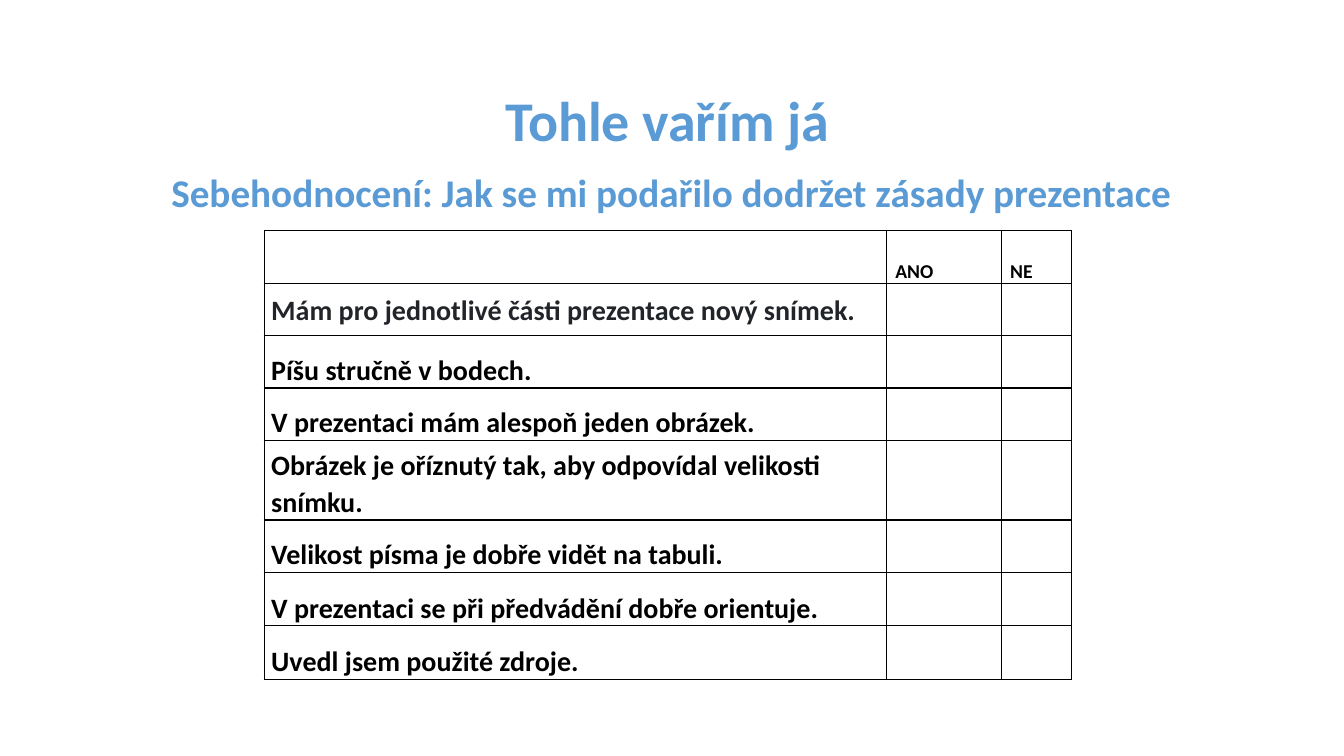
from lxml import etree
from pptx import Presentation
from pptx import util as u
from pptx.dml.color import RGBColor
from pptx.enum import text
from pptx.oxml import ns

COLORS = {"heading": "5B9BD5", "ink": "000000", "dark": "212529"}
FONT = "Calibri"
HEADINGS = [  # wording, box in inches, size, anchor, space before
    ("Tohle vařím já", (0.87, 0.72, 11.5, 0.85), 40, "BOTTOM", 0),
    ("Sebehodnocení: Jak se mi podařilo dodržet zásady prezentace",
     (0.98, 1.67, 11.35, 0.6), 28, "TOP", 10),
]
ANSWERS = ["ANO", "NE"]
CRITERIA = [
    "Mám pro jednotlivé části prezentace nový snímek.",
    "Píšu stručně v bodech.",
    "V prezentaci mám alespoň jeden obrázek.",
    "Obrázek je oříznutý tak, aby odpovídal velikosti snímku.",
    "Velikost písma je dobře vidět na tabuli.",
    "V prezentaci se při předvádění dobře orientuje.",
    "Uvedl jsem použité zdroje.",
]
TABLE_LEFT, TABLE_TOP = 2.62, 2.29
COLUMNS = [6.17, 1.14, 0.7]
ROWS = [0.52] * 4 + [0.79] + [0.52] + [0.53] * 2


def write(frame, words, size, color, **formats):
    paragraph = frame.paragraphs[0]
    for name, value in formats.items():
        setattr(paragraph, name, value)
    run = paragraph.add_run()
    run.text = words
    for name, value in {"name": FONT, "size": u.Pt(size), "bold": True}.items():
        setattr(run.font, name, value)
    run.font.color.rgb = RGBColor.from_string(COLORS[color])
    return paragraph


def add_heading(slide, words, box, size, anchor, space):
    frame = slide.shapes.add_textbox(*map(u.Inches, box)).text_frame
    frame.word_wrap = True
    frame.vertical_anchor = text.MSO_ANCHOR[anchor]
    write(frame, words, size, "heading", alignment=text.PP_ALIGN.CENTER,
          line_spacing=0.9, space_before=u.Pt(space))


def add_borders(cell):
    properties = cell._tc.get_or_add_tcPr()
    for index, side in enumerate(("lnL", "lnR", "lnT", "lnB")):
        line = etree.Element(ns.qn(f"a:{side}"), w=str(u.Pt(1)))
        fill = etree.SubElement(line, ns.qn("a:solidFill"))
        etree.SubElement(fill, ns.qn("a:srgbClr"), val=COLORS["ink"])
        properties.insert(index, line)


def fill_cell(cell, row, column, words):
    for name, value in {"margin_left": 0.07, "margin_right": 0.07,
                        "margin_top": 0, "margin_bottom": 0}.items():
        setattr(cell, name, u.Inches(value))
    anchor = "MIDDLE" if row == 1 else "BOTTOM"
    cell.vertical_anchor = text.MSO_ANCHOR[anchor]
    paragraph = write(cell.text_frame, words, 20 if row else 14,
                      "dark" if row == 1 else "ink",
                      line_spacing=1.07, space_after=u.Pt(8))
    if column:
        paragraph._p.get_or_add_pPr().set("marL", str(u.Inches(0.02)))


def add_checklist(slide):
    box = (TABLE_LEFT, TABLE_TOP, sum(COLUMNS), sum(ROWS))
    table = slide.shapes.add_table(
        len(ROWS), len(COLUMNS), *map(u.Inches, box)).table
    table.first_row = table.horz_banding = False
    for column, width in zip(table.columns, COLUMNS):
        column.width = u.Inches(width)
    for row, height in zip(table.rows, ROWS):
        row.height = u.Inches(height)
    grid = [[""] + ANSWERS] + [[words, "", ""] for words in CRITERIA]
    for row, line in enumerate(grid):
        for column, words in enumerate(line):
            cell = table.cell(row, column)
            cell.fill.background()
            add_borders(cell)
            if words:
                fill_cell(cell, row, column, words)


def main():
    presentation = Presentation()
    presentation.slide_width = u.Inches(13.33)
    presentation.slide_height = u.Inches(7.5)
    slide = presentation.slides.add_slide(presentation.slide_layouts[6])
    for heading in HEADINGS:
        add_heading(slide, *heading)
    add_checklist(slide)
    presentation.save("out.pptx")


if __name__ == "__main__":
    main()
